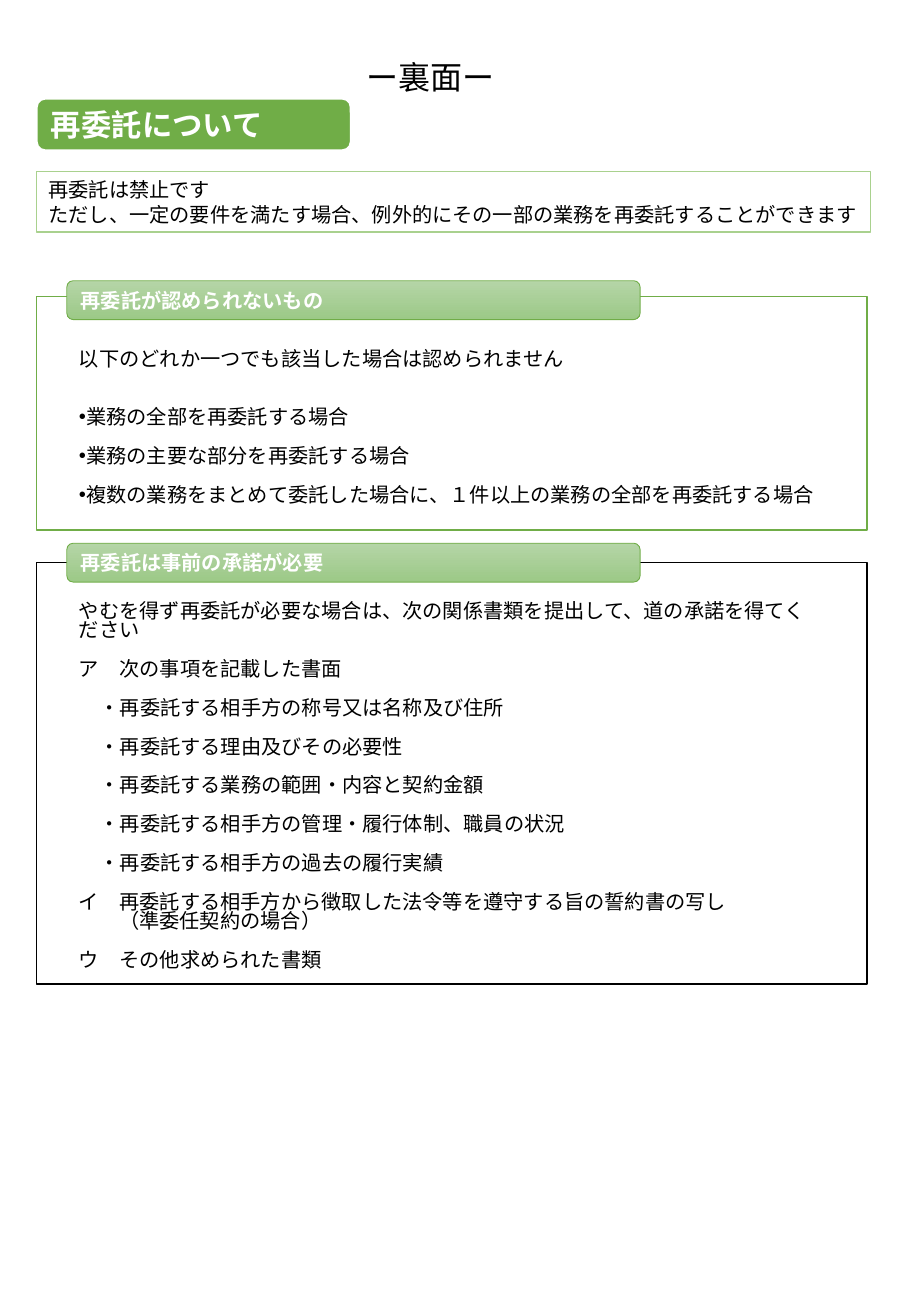
from lxml import etree
from pptx import Presentation
from pptx.dml.color import RGBColor
from pptx.enum.shapes import MSO_SHAPE
from pptx.enum.text import MSO_ANCHOR, MSO_AUTO_SIZE, PP_ALIGN
from pptx.oxml.ns import qn
from pptx.util import Inches, Pt

FONT = "Noto Sans CJK JP"
BLACK = RGBColor(0x00, 0x00, 0x00)
WHITE = RGBColor(0xFF, 0xFF, 0xFF)
GREEN = RGBColor(0x70, 0xAD, 0x47)
PALE_GREEN = RGBColor(0xA9, 0xD1, 0x8E)
LABEL_TOP = RGBColor(0xB5, 0xD5, 0xA7)
LABEL_BOTTOM = RGBColor(0x9C, 0xC9, 0x87)
LINE_PITCH = 11.5


def set_font(paragraph, size, color=BLACK, bold=False):
    """Format a paragraph, naming the font for Latin and East Asian text alike."""
    font = paragraph.font
    font.size, font.bold, font.name = Pt(size), bold, FONT
    font.color.rgb = color
    defaults = paragraph._p.pPr.find(qn("a:defRPr"))
    etree.SubElement(defaults, qn("a:ea"), typeface=FONT)


def place(shape, left, top, width, height):
    shape.left, shape.top = Inches(left), Inches(top)
    shape.width, shape.height = Inches(width), Inches(height)


presentation = Presentation()
presentation.slide_width = Inches(7.5)
presentation.slide_height = Inches(10.83)
slide = presentation.slides.add_slide(presentation.slide_layouts[3])

# Page title
title = slide.shapes.title
place(title, -0.07, 0.42, 7.23, 0.42)
title.text_frame.text = "ー裏面ー"
title.text_frame.auto_size = MSO_AUTO_SIZE.NONE
title.text_frame.vertical_anchor = MSO_ANCHOR.MIDDLE
title.text_frame.paragraphs[0].alignment = PP_ALIGN.CENTER
set_font(title.text_frame.paragraphs[0], 19)

# Panels: each line is (text, left margin, bullet, blank lines before)
not_allowed = [
    ("以下のどれか一つでも該当した場合は認められません", 0, False, 0),
    ("業務の全部を再委託する場合", 0.06, True, 2),
    ("業務の主要な部分を再委託する場合", 0.06, True, 1),
    ("複数の業務をまとめて委託した場合に、１件以上の業務の全部を再委託する場合", 0.06, True, 1),
]
approval = [
    ("やむを得ず再委託が必要な場合は、次の関係書類を提出して、道の承諾を得てください", 0, False, 0),
    ("ア　次の事項を記載した書面", 0, False, 1),
    ("・再委託する相手方の称号又は名称及び住所", 0.17, False, 1),
    ("・再委託する理由及びその必要性", 0.17, False, 1),
    ("・再委託する業務の範囲・内容と契約金額", 0.17, False, 1),
    ("・再委託する相手方の管理・履行体制、職員の状況", 0.17, False, 1),
    ("・再委託する相手方の過去の履行実績", 0.17, False, 1),
    ("イ　再委託する相手方から徴取した法令等を遵守する旨の誓約書の写し", 0, False, 1),
    ("（準委任契約の場合）", 0.33, False, 0),
    ("ウ　その他求められた書類", 0, False, 1),
]
panels = [
    (1, 2.44, 1.92, 0.45, GREEN, not_allowed),
    (2, 4.63, 3.47, 0.33, BLACK, approval),
]
for index, top, height, text_inset, line_color, lines in panels:
    panel = slide.placeholders[index]
    place(panel, 0.3, top, 6.84, height)
    panel.fill.solid()
    panel.fill.fore_color.rgb = WHITE
    panel.line.color.rgb = line_color
    panel.line.width = Pt(1)
    frame = panel.text_frame
    frame.auto_size = MSO_AUTO_SIZE.NONE
    frame.vertical_anchor = MSO_ANCHOR.TOP
    frame.margin_left = frame.margin_right = Inches(0.35)
    frame.margin_top, frame.margin_bottom = Inches(text_inset), 0
    frame.text = "\n".join(line[0] for line in lines)
    for paragraph, (_, margin, bullet, blanks) in zip(frame.paragraphs, lines):
        paragraph.line_spacing = Pt(LINE_PITCH)
        paragraph.space_before = Pt(LINE_PITCH * blanks)
        properties = paragraph._p.get_or_add_pPr()
        properties.set("marL", str(Inches(margin)))
        properties.set("indent", str(-Inches(margin) if bullet else 0))
        if bullet:
            etree.SubElement(properties, qn("a:buChar"), char="•")
        else:
            etree.SubElement(properties, qn("a:buNone"))
        set_font(paragraph, 12)

# Green heading and the two panel labels
headings = [
    ("再委託について", MSO_SHAPE.ROUNDED_RECTANGLE, (0.3, 0.81, 2.59, 0.43), 18, WHITE, 1.5),
    ("再委託は事前の承諾が必要", MSO_SHAPE.FLOWCHART_ALTERNATE_PROCESS, (0.55, 4.47, 4.72, 0.32), 12, GREEN, 0.5),
    ("再委託が認められないもの", MSO_SHAPE.FLOWCHART_ALTERNATE_PROCESS, (0.55, 2.31, 4.72, 0.32), 12, GREEN, 0.5),
]
for label, kind, box, size, line_color, line_width in headings:
    heading = slide.shapes.add_shape(kind, *map(Inches, box))
    heading.shadow.inherit = False
    if kind == MSO_SHAPE.ROUNDED_RECTANGLE:
        heading.fill.solid()
        heading.fill.fore_color.rgb = GREEN
    else:
        heading.fill.gradient()
        heading.fill.gradient_angle = 270
        for stop, color in zip(heading.fill.gradient_stops, (LABEL_TOP, LABEL_BOTTOM)):
            stop.color.rgb = color
    heading.line.color.rgb = line_color
    heading.line.width = Pt(line_width)
    heading.text_frame.text = label
    heading.text_frame.vertical_anchor = MSO_ANCHOR.MIDDLE
    heading.text_frame.paragraphs[0].alignment = PP_ALIGN.LEFT
    set_font(heading.text_frame.paragraphs[0], size, WHITE, True)

# Framed summary
summary = slide.shapes.add_textbox(Inches(0.3), Inches(1.41), Inches(6.87), Inches(0.5))
summary.line.color.rgb = PALE_GREEN
summary.line.width = Pt(0.75)
frame = summary.text_frame
frame.word_wrap = True
frame.margin_top = frame.margin_bottom = Inches(0.04)
frame.text = "再委託は禁止です\nただし、一定の要件を満たす場合、例外的にその一部の業務を再委託することができます"
for paragraph in frame.paragraphs:
    paragraph.line_spacing = Pt(14.8)
    set_font(paragraph, 12)

presentation.save("out.pptx")
